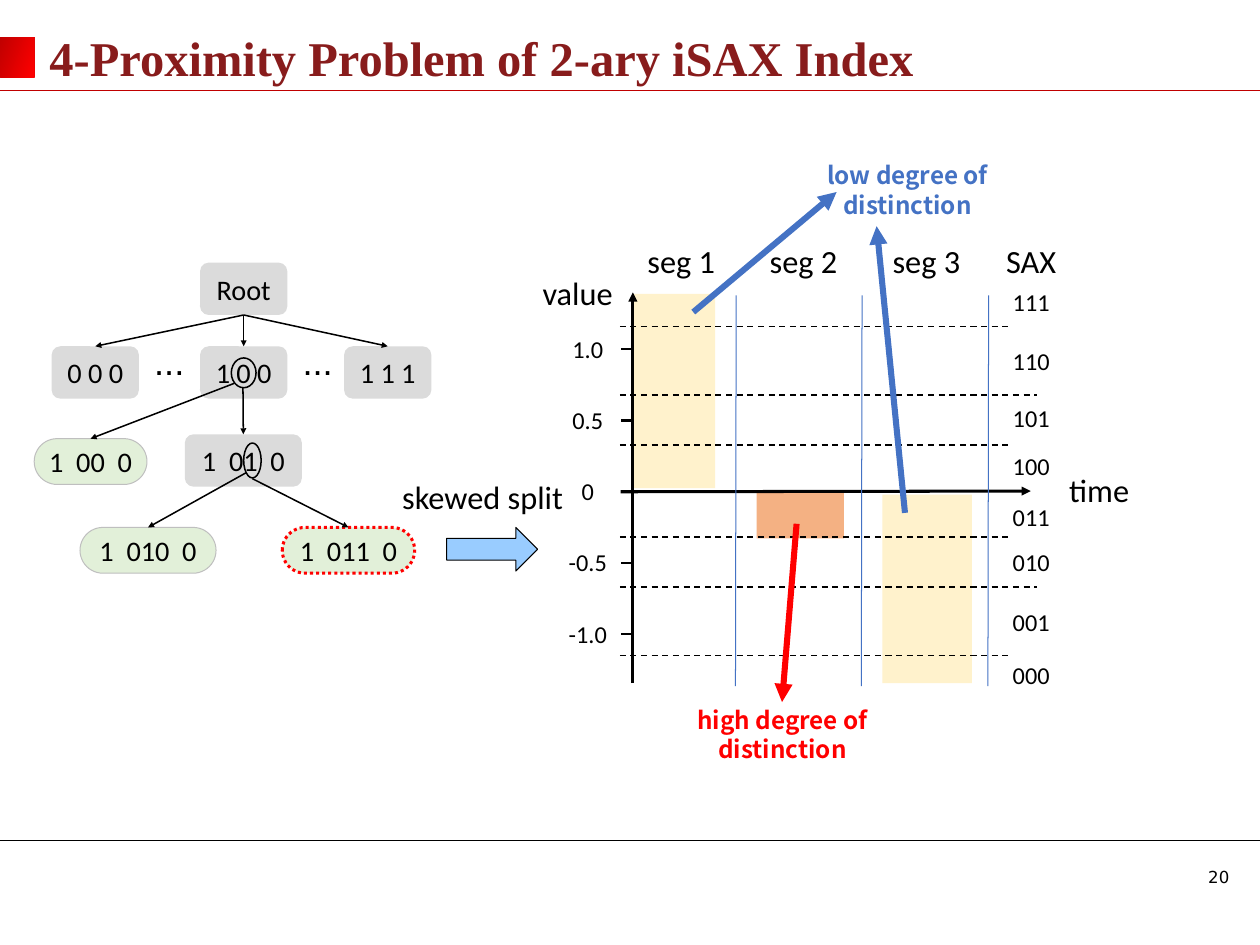
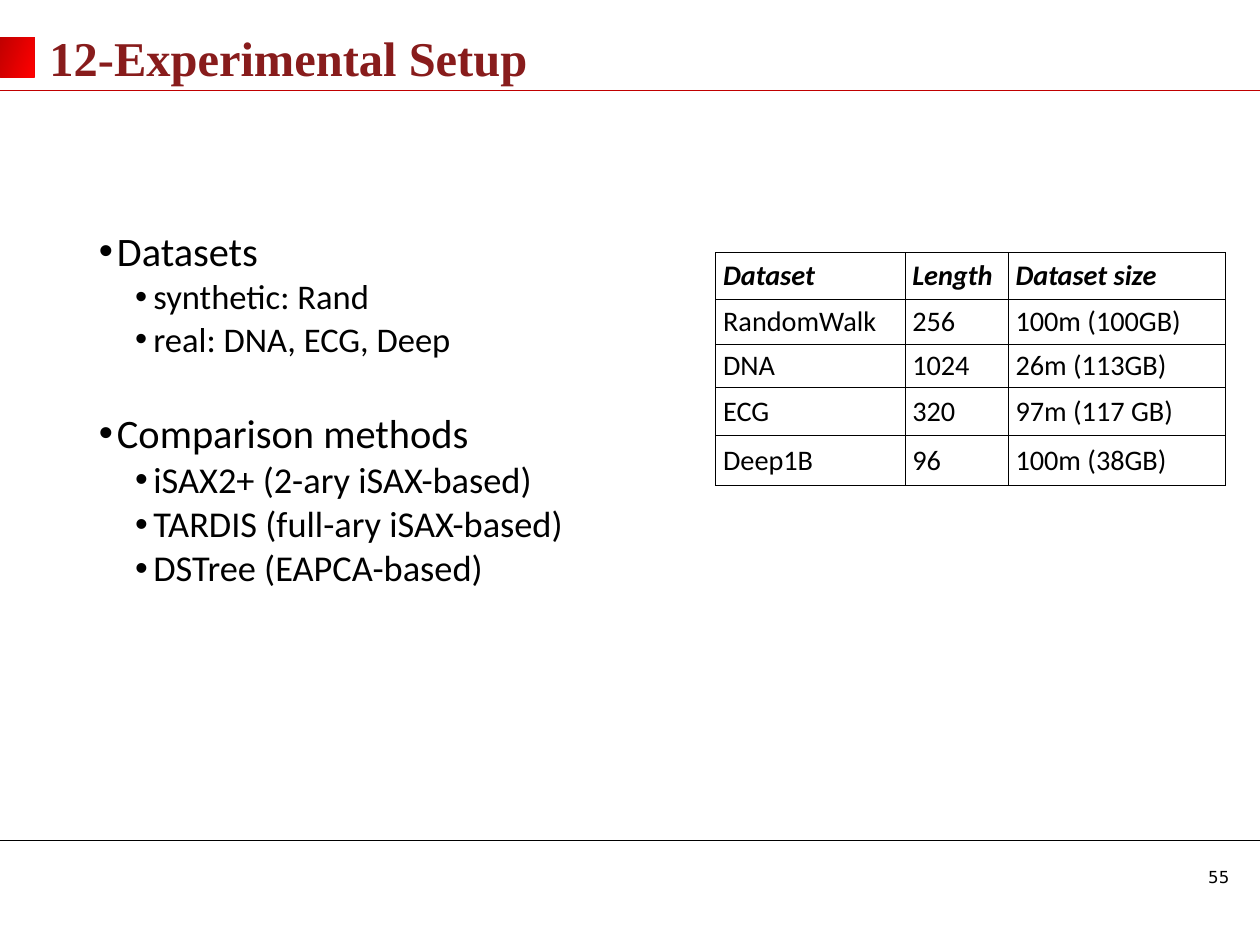
from dataclasses import dataclass
from typing import Any, NamedTuple, Optional

from lxml import etree
from pptx import Presentation
from pptx import util as u
from pptx.dml.color import RGBColor
from pptx.enum import dml, shapes, text
from pptx.oxml import ns

EMU_PER_PX = 9144  # 100 px to the inch
SLIDE_SIZE = (1732, 1299)

BLACK, RED, DARK_RED, BLUE = "000000", "FF0000", "C00000", "4472C4"
GREY, GREEN, CREAM, ORANGE, SKY = "DBDBDB", "E2F0D9", "FFF2CC", "F4B183", "99CCFF"
SILVER, MAROON = "BFBFBF", "881C1C"

LEFT, CENTER = text.PP_ALIGN.LEFT, text.PP_ALIGN.CENTER
TOP, MIDDLE = text.MSO_ANCHOR.TOP, text.MSO_ANCHOR.MIDDLE
RECT = shapes.MSO_SHAPE.RECTANGLE
ROUNDED = shapes.MSO_SHAPE.ROUNDED_RECTANGLE
DASH, DOTS = dml.MSO_LINE.DASH, dml.MSO_LINE.ROUND_DOT


class Box(NamedTuple):
    left: int
    top: int
    width: int
    height: int


class Point(NamedTuple):
    x: int
    y: int


@dataclass(frozen=True)
class Outline:
    color: str = BLACK
    width: float = 1
    dash: Any = None


@dataclass(frozen=True)
class TextStyle:
    size: float
    name: str = "Calibri"
    color: str = BLACK
    bold: bool = False
    italic: bool = False


@dataclass(frozen=True)
class Node:
    label: str
    box: Box
    leaf: bool = False
    outline: Optional[Outline] = None


@dataclass(frozen=True)
class BodyLine:
    label: str
    size: float
    level: int = 1
    before: int = 5


NODE_TEXT = TextStyle(28)
AXIS_TEXT = TextStyle(32)
TICK_TEXT = TextStyle(24)
TITLE_TEXT = TextStyle(48, "Times New Roman", MAROON, bold=True)
EDGE = Outline(width=1.5)


# Basic helpers
def px(value: float) -> u.Emu:
    return u.Emu(round(value * EMU_PER_PX))


def scaled(values: tuple) -> list:
    return [px(value) for value in values]


def rgb(color: str) -> RGBColor:
    return RGBColor.from_string(color)


def apply(target: Any, values: dict) -> None:
    for key, value in values.items():
        setattr(target, key, value)


def add_run(paragraph: Any, label: str, style: TextStyle) -> Any:
    run = paragraph.add_run()
    run.text = label
    apply(run.font, {"size": u.Pt(style.size), "name": style.name,
                     "bold": style.bold, "italic": style.italic})
    run.font.color.rgb = rgb(style.color)
    return run


def write(frame: Any, label: str, style: TextStyle, align: Any = LEFT, anchor: Any = TOP) -> Any:
    apply(frame, {"word_wrap": True, "auto_size": text.MSO_AUTO_SIZE.NONE,
                  "vertical_anchor": anchor})
    paragraph = frame.paragraphs[0]
    paragraph.alignment = align
    add_run(paragraph, label, style)
    return paragraph


def add_text(slide: Any, box: Box, label: str, style: TextStyle,
             align: Any = CENTER, anchor: Any = TOP) -> Any:
    frame = slide.shapes.add_textbox(*scaled(box)).text_frame
    return write(frame, label, style, align, anchor)


def draw_line(line: Any, outline: Optional[Outline]) -> None:
    if outline is None:
        line.fill.background()
        return
    line.color.rgb = rgb(outline.color)
    line.width = u.Pt(outline.width)
    if outline.dash is not None:
        line.dash_style = outline.dash


def add_shape(slide: Any, kind: Any, box: Box, fill: Optional[str],
              outline: Optional[Outline] = None) -> Any:
    shape = slide.shapes.add_shape(kind, *scaled(box))
    shape.shadow.inherit = False
    if fill is None:
        shape.fill.background()
    else:
        shape.fill.solid()
        shape.fill.fore_color.rgb = rgb(fill)
    draw_line(shape.line, outline)
    return shape


def add_line(slide: Any, start: Point, end: Point, outline: Outline, arrow: bool = False) -> Any:
    connector = slide.shapes.add_connector(shapes.MSO_CONNECTOR.STRAIGHT, *scaled(start + end))
    draw_line(connector.line, outline)
    if arrow:
        line_xml = connector.line._get_or_add_ln()
        etree.SubElement(line_xml, ns.qn("a:tailEnd"), type="triangle")
    etree.SubElement(connector._element.spPr, ns.qn("a:effectLst"))
    return connector


# Shared frame of every slide
def add_slide(presentation: Any, title: str, title_width: int, number: int) -> Any:
    slide = presentation.slides.add_slide(presentation.slide_layouts[5])
    right = SLIDE_SIZE[0]
    add_line(slide, Point(0, 1155), Point(right, 1155), Outline())
    marker = add_shape(slide, RECT, Box(0, 51, 47, 55), DARK_RED)
    marker.fill.gradient()
    marker.fill.gradient_angle = 340
    for stop, color, position in zip(marker.fill.gradient_stops, (DARK_RED, RED), (0, 1)):
        stop.color.rgb = rgb(color)
        stop.position = position
    add_line(slide, Point(0, 124), Point(right, 124), Outline(DARK_RED))
    add_text(slide, Box(1651, 1187, 108, 38), str(number), TextStyle(16.4, "DejaVu Sans"), LEFT)
    placeholder = slide.shapes.title
    box = Box(58, 21, title_width, 116)
    apply(placeholder, dict(zip(Box._fields, scaled(box))))
    write(placeholder.text_frame, title, TITLE_TEXT, LEFT, MIDDLE)
    return slide


# Index tree
def add_node(slide: Any, node: Node) -> Any:
    shape = add_shape(slide, ROUNDED, node.box, GREEN if node.leaf else GREY, node.outline)
    if node.leaf:
        shape.adjustments[0] = 0.5
    frame = shape.text_frame
    apply(frame, {"margin_left": 0, "margin_right": 0, "vertical_anchor": MIDDLE})
    paragraph = frame.paragraphs[0]
    paragraph.alignment = CENTER
    wide = "  " not in node.label and len(node.label) > 5
    for piece in node.label.replace(" ", "| |").split("|"):
        run = add_run(paragraph, piece, NODE_TEXT)
        if piece == " " and wide:
            run.font._element.set("spc", "630")  # doubles the width of the gap
    return shape


def add_tree(slide: Any) -> None:
    pale = Outline(SILVER)
    nodes = {
        "root": Node("Root", Box(275, 361, 120, 72)),
        "first": Node("0 0 0", Box(71, 476, 120, 72)),
        "middle": Node("1 0 0", Box(275, 476, 120, 72)),
        "last": Node("1 1 1", Box(473, 476, 120, 72)),
        "left leaf": Node("1 00 0", Box(47, 603, 155, 63), True, pale),
        "inner": Node("1 01 0", Box(254, 597, 161, 72)),
        "low leaf": Node("1 010 0", Box(110, 725, 187, 63), True, pale),
        "skewed leaf": Node("1 011 0", Box(388, 725, 182, 63), True, Outline(RED, 3, DOTS)),
    }
    drawn = {name: add_node(slide, node) for name, node in nodes.items()}
    for box in (Box(318, 492, 34, 41), Box(335, 609, 24, 48)):
        add_shape(slide, shapes.MSO_SHAPE.OVAL, box, None, EDGE)

    root_bottom = Point(335, 433)
    edges = [(root_bottom, "first"), (root_bottom, "middle"), (root_bottom, "last"),
             (Point(334, 533), "inner"), (Point(322, 527), "left leaf"),
             (Point(338, 650), "low leaf"), (Point(347, 658), "skewed leaf")]
    for start, child in edges:
        connector = add_line(slide, start, start, EDGE, arrow=True)
        if start is root_bottom:
            connector.begin_connect(drawn["root"], 2)
        connector.end_connect(drawn[child], 0)
    for left in (202, 406):
        add_text(slide, Box(left, 461, 71, 71), "...", TextStyle(36, "Arial"), LEFT)


# Value ranges by segment
def add_value_plot(slide: Any) -> None:
    for box, fill in ((Box(1040, 675, 120, 65), ORANGE), (Box(1213, 680, 123, 259), CREAM),
                      (Box(870, 404, 113, 267), CREAM)):
        add_shape(slide, RECT, box, fill)
    axis = Outline(width=3)
    add_line(slide, Point(870, 939), Point(870, 402), axis, arrow=True)
    add_line(slide, Point(853, 676), Point(1417, 675), axis, arrow=True)
    add_text(slide, Box(733, 371, 122, 64), "value", AXIS_TEXT)
    add_text(slide, Box(1450, 642, 122, 64), "time", AXIS_TEXT)

    for step, label in zip(range(-2, 3), ("1.0", "0.5", "0", "-0.5", "-1.0")):
        add_text(slide, Box(751, 650 + 98 * step, 114, 50), label, TICK_TEXT)
        if step:
            y = 676 + 98 * step
            add_line(slide, Point(870, y), Point(854, y), Outline(width=2.25))

    for index in range(3):
        x = 1012 + 347 * index // 2
        add_line(slide, Point(x, 406), Point(x - 1, 943), Outline(BLUE))
        add_text(slide, Box(873 + 337 * index // 2, 327, 127, 64), f"seg {index + 1}", AXIS_TEXT)
    add_text(slide, Box(1354, 327, 127, 64), "SAX", AXIS_TEXT)

    for offset, right in ((63, 1387), (132, 1426), (226, 1387)):
        for y in (675 - offset, 675 + offset):
            add_line(slide, Point(852, y), Point(right, y), Outline(width=1.5, dash=DASH))
    for index, top in enumerate((390, 471, 549, 615, 685, 748, 830, 903)):
        add_text(slide, Box(1381, top, 73, 50), f"{7 - index:03b}", TICK_TEXT)


def add_callouts(slide: Any) -> None:
    for box, degree, color in ((Box(1126, 216, 243, 91), "low", BLUE),
                               (Box(938, 965, 275, 91), "high", RED)):
        style = TextStyle(24, "Noto Sans CJK JP", color, bold=True)
        add_text(slide, box, f"{degree} degree of distinction", style)
    for start, end, color in ((Point(1244, 705), Point(1205, 311), BLUE),
                              (Point(953, 429), Point(1150, 264), BLUE),
                              (Point(1095, 720), Point(1075, 965), RED)):
        add_line(slide, start, end, Outline(color, 6), arrow=True)
    add_shape(slide, shapes.MSO_SHAPE.RIGHT_ARROW, Box(614, 725, 125, 60), SKY, Outline())
    caption = add_text(slide, Box(543, 646, 262, 80), "skewed split", AXIS_TEXT, LEFT, MIDDLE)
    caption.line_spacing = 0.9


# Experimental setup
def add_border(cell: Any, side: str) -> None:
    border = etree.SubElement(cell._tc.get_or_add_tcPr(), ns.qn(f"a:{side}"), w=str(u.Pt(1)))
    fill = etree.SubElement(border, ns.qn("a:solidFill"))
    etree.SubElement(fill, ns.qn("a:srgbClr"), val=BLACK)


def add_dataset_table(slide: Any) -> None:
    rows = [("", "", ""),
            ("Dataset", "Length", "Dataset size"),
            ("RandomWalk", "256", "100m (100GB)"),
            ("DNA", "1024", "26m (113GB)"),
            ("ECG", "320", "97m (117 GB)"),
            ("Deep1B", "96", "100m (38GB)")]
    table = slide.shapes.add_table(6, 3, *scaled(Box(984, 287, 701, 380))).table
    apply(table, {"first_row": False, "horz_banding": False})
    for column, width in zip(table.columns, (260, 142, 299)):
        column.width = px(width)
    for row, height in zip(table.rows, (60, 65, 61, 60, 66, 68)):
        row.height = px(height)
    for row_index, labels in enumerate(rows):
        header = row_index == 1
        style = TextStyle(28, bold=header, italic=header)
        for column_index, label in enumerate(labels):
            cell = table.cell(row_index, column_index)
            for side in ("lnL", "lnR", "lnT", "lnB") if row_index else ("lnB",):
                add_border(cell, side)
            cell.fill.background()
            cell.vertical_anchor = MIDDLE
            if label:
                add_run(cell.text_frame.paragraphs[0], label, style)
    table.cell(0, 0).merge(table.cell(0, 2))


def add_body(slide: Any) -> None:
    lines = [BodyLine("Datasets", 40, 0, 0),
             BodyLine("synthetic: Rand", 34.2),
             BodyLine("real: DNA, ECG, Deep", 34.2),
             BodyLine("Comparison methods", 40, 0, 53),
             BodyLine("iSAX2+ (2-ary iSAX-based)", 36),
             BodyLine("TARDIS (full-ary iSAX-based)", 36),
             BodyLine("DSTree (EAPCA-based)", 36)]
    frame = slide.shapes.add_textbox(*scaled(Box(126, 313, 721, 514))).text_frame
    frame.word_wrap = True
    for index, line in enumerate(lines):
        paragraph = frame.add_paragraph() if index else frame.paragraphs[0]
        properties = paragraph._p.get_or_add_pPr()
        properties.set("marL", str(px(25 + 50 * line.level)))
        properties.set("indent", str(px(-25)))
        etree.SubElement(properties, ns.qn("a:buFont"), typeface="Arial")
        etree.SubElement(properties, ns.qn("a:buChar"), char="•")
        apply(paragraph, {"level": line.level, "line_spacing": 0.9,
                          "space_before": u.Pt(line.before)})
        add_run(paragraph, line.label, TextStyle(line.size))


def main() -> None:
    presentation = Presentation()
    presentation.slide_width, presentation.slide_height = scaled(SLIDE_SIZE)

    problem = add_slide(presentation, "4-Proximity Problem of 2-ary iSAX Index", 1343, 20)
    add_tree(problem)
    add_value_plot(problem)
    add_callouts(problem)

    setup = add_slide(presentation, "12-Experimental Setup", 1230, 55)
    add_dataset_table(setup)
    add_body(setup)

    presentation.save("out.pptx")


if __name__ == "__main__":
    main()
